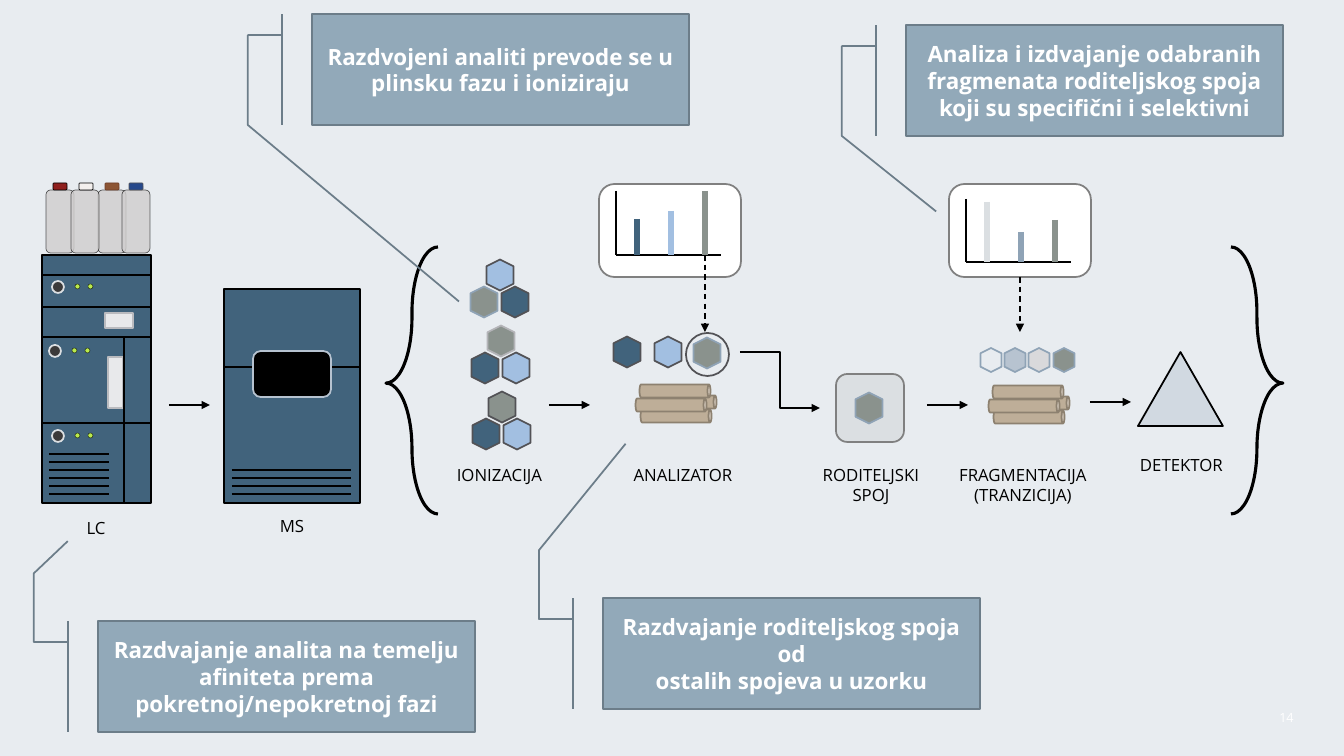
from lxml import etree
from pptx import Presentation
from pptx.dml.color import RGBColor
from pptx.enum.dml import MSO_LINE
from pptx.enum.shapes import MSO_CONNECTOR, MSO_SHAPE
from pptx.enum.text import MSO_ANCHOR, PP_ALIGN
from pptx.oxml.ns import qn
from pptx.util import Pt

RECT, ROUND, OVAL = MSO_SHAPE.RECTANGLE, MSO_SHAPE.ROUNDED_RECTANGLE, MSO_SHAPE.OVAL
HEXAGON, CAN, TRIANGLE = MSO_SHAPE.HEXAGON, MSO_SHAPE.CAN, MSO_SHAPE.ISOSCELES_TRIANGLE
LEFT_BRACE, RIGHT_BRACE = MSO_SHAPE.LEFT_BRACE, MSO_SHAPE.RIGHT_BRACE
CALLOUT = MSO_SHAPE.LINE_CALLOUT_3_BORDER_AND_ACCENT_BAR
STRAIGHT, ELBOW = MSO_CONNECTOR.STRAIGHT, MSO_CONNECTOR.ELBOW
DASH, CENTER, MIDDLE = MSO_LINE.DASH, PP_ALIGN.CENTER, MSO_ANCHOR.MIDDLE

rgb = RGBColor.from_string
BACKGROUND, BLACK, WHITE = rgb("E8ECF0"), rgb("000000"), rgb("FFFFFF")
STEEL, SKY, SAGE = rgb("41637C"), rgb("A2BFE1"), rgb("8A928D")
MIST, SLATE, CHARCOAL, ASH = rgb("DBDFE2"), rgb("8FA3B6"), rgb("525256"), rgb("808080")
PALE, HAZE, SILVER, SOFT = rgb("D1D9E1"), rgb("B7C3D0"), rgb("D9D9DB"), rgb("B4B4B8")
BOTTLE, KNOB, LED = rgb("D0CECE"), rgb("3B3A3A"), rgb("BAEA4E")
SLOT, SLOT_EDGE = rgb("E8E9EB"), rgb("BABBBF")
WOOD, BARK = rgb("BEAE98"), rgb("8D8170")
NOTE, NOTE_EDGE = rgb("92A9B9"), rgb("6C7D89")

FONT = "Open Sans"
PX = 914400 / 100.8

# Content: text, left, top, width, height, wrap
LABELS = [
    ("LC", 14, 513, 164, 30, True),
    ("MS", 210, 511, 164, 30, True),
    ("IONIZACIJA", 445, 460, 109, 30, True),
    ("ANALIZATOR", 619, 460, 128, 30, True),
    ("RODITELJSKI\nSPOJ", 807, 460, 128, 50, True),
    ("FRAGMENTACIJA\n(TRANZICIJA)", 946, 460, 154, 50, False),
    ("DETEKTOR", 1118, 450, 127, 30, True),
]
# text, left, top, last two points of the leader (y, x)
CALLOUTS = [
    ("Razdvajanje analita na temelju afiniteta prema pokretnoj/nepokretnoj fazi",
     98, 621, (-0.43, -0.17, -0.72, -0.08)),
    ("Razdvojeni analiti prevode se u plinsku fazu i ioniziraju",
     312, 14, (1, -0.17, 2.59, 0.39)),
    ("Razdvajanje roditeljskog spoja od\nostalih spojeva u uzorku",
     603, 598, (-0.43, -0.17, -1.39, 0.06)),
    ("Analiza i izdvajanje odabranih\nfragmenata roditeljskog spoja\nkoji su specifični i selektivni",
     906, 25, (1, -0.17, 1.68, 0.08)),
]
LC_MODULES = [(307, 30), (423, 80), (337, 86), (274, 33), (255, 20)]
BOTTLES = [46, 98, 71, 122]
CAPS = [(53, rgb("8F1F1D"), BLACK), (129, rgb("25488B"), CHARCOAL),
        (105, rgb("8C5534"), rgb("6D3D27")), (79, rgb("F4F0EE"), BLACK)]
CONTROLS = [(52, 281), (49, 345), (52, 430)]
SLOTS = [(105, 313, 28, 15), (108, 357, 15, 51)]
# top hexagon centre, then (fill, line) for right, top, left
CLUSTERS = [
    (500, 275, [(STEEL, CHARCOAL), (SKY, CHARCOAL), (SAGE, SLATE)]),
    (501, 341, [(SKY, CHARCOAL), (SAGE, SOFT), (STEEL, CHARCOAL)]),
    (502, 407, [(SKY, CHARCOAL), (SAGE, CHARCOAL), (STEEL, CHARCOAL)]),
]
IONS = [(707, 353, SAGE, SLATE), (627, 352, STEEL, CHARCOAL), (668, 352, SKY, CHARCOAL)]
FRAGMENTS = [(1064, SAGE), (1039, SILVER), (1015, HAZE), (991, None)]
ROD_BUNDLES = [(671, 405), (1024, 406)]
ROD_OFFSETS = [(10, -3), (4, -14), (5, 11), (0, 0)]
# card left, axis top, axis base, (bar offset, bar top, colour)
SPECTRA = [
    (599, 191, 255, [(38, 219, STEEL), (72, 211, SKY), (106, 191, SAGE)]),
    (949, 199, 262, [(38, 202, MIST), (72, 232, SLATE), (106, 220, SAGE)]),
]
FLOW_ARROWS = [(169, 405), (549, 405), (927, 405), (1090, 402)]


def px(*lengths):
    return [round(length * PX) for length in lengths]


def add_box(board, kind, left, top, width, height, fill, line, weight=1.25, adjust=()):
    box = board.add_shape(kind, *px(left, top, width, height))
    box.shadow.inherit = False
    if fill is None:
        box.fill.background()
    else:
        box.fill.solid()
        box.fill.fore_color.rgb = fill
    box.line.color.rgb = line
    box.line.width = Pt(weight)
    for index, value in enumerate(adjust):
        box.adjustments[index] = value
    return box


def add_upright(kind, x, y, width, height, fill, line, adjust=()):
    box = add_box(page.shapes, kind, x - width / 2, y - height / 2, width, height,
                  fill, line, adjust=adjust)
    box.rotation = 90


def add_hexagon(x, y, fill, line, width=31, height=27):
    add_upright(HEXAGON, x, y, width, height, fill, line)


def add_line(board, x1, y1, x2, y2, color=BLACK, weight=1.0, kind=STRAIGHT,
             arrow=False, dash=None):
    line = board.add_connector(kind, *px(x1, y1, x2, y2))
    line.line.color.rgb = color
    line.line.width = Pt(weight)
    if dash is not None:
        line.line.dash_style = dash
    properties = line._element.spPr
    if arrow:
        etree.SubElement(properties.find(qn("a:ln")), qn("a:tailEnd"), type="triangle")
    etree.SubElement(properties, qn("a:effectLst"))
    return line


def write(box, text, size, color, bold=False):
    box.text_frame.text = text
    for para in box.text_frame.paragraphs:
        para.alignment = CENTER
        for span in para.runs:
            span.font.name, span.font.size = FONT, Pt(size)
            span.font.color.rgb, span.font.bold = color, bold


def add_label(text, left, top, width, height, wrap=True, size=12, color=BLACK):
    box = page.shapes.add_textbox(*px(left, top, width, height))
    box.text_frame.word_wrap = wrap
    write(box, text, size, color)
    return box


deck = Presentation()
deck.slide_width, deck.slide_height = px(1344, 756)
page = deck.slides.add_slide(deck.slide_layouts[6])
page.background.fill.solid()
page.background.fill.fore_color.rgb = BACKGROUND

# Liquid chromatograph
lc = page.shapes.add_group_shape().shapes
for top, height in LC_MODULES:
    add_box(lc, RECT, 42, top, 109, height, STEEL, BLACK)
for left in BOTTLES:
    bottle = add_box(lc, ROUND, left, 190, 28, 63, BOTTLE, BLACK, 0.5)
    for color, alpha in zip(bottle._element.spPr.iter(qn("a:srgbClr")), ("82000", "60000")):
        etree.SubElement(color, qn("a:alpha"), val=alpha)
for left, fill, edge in CAPS:
    add_box(lc, ROUND, left, 183, 14, 7, fill, edge, 0.5)
for left, top in CONTROLS:
    add_box(lc, OVAL, left, top, 12, 12, KNOB, MIST)
    for offset in (23, 36):
        add_box(lc, OVAL, left + offset, top + 3, 5, 5, LED, BLACK, 0.25)
for slot in SLOTS:
    add_box(lc, RECT, *slot, SLOT, SLOT_EDGE)
add_line(lc, 124, 337, 124, 503)
for y in range(454, 495, 8):
    add_line(lc, 49, y, 109, y, weight=1.75)

# Mass spectrometer
ms = page.shapes.add_group_shape().shapes
add_box(ms, RECT, 224, 289, 136, 214, STEEL, BLACK)
add_line(ms, 360, 367, 224, 367)
add_box(ms, ROUND, 253, 351, 78, 46, BLACK, HAZE)
for y in range(470, 495, 8):
    add_line(ms, 232, y, 351, y, weight=1.75)

# Ions and rods
for x, y, (right, top, left) in CLUSTERS:
    add_hexagon(x + 15, y + 27, *right)
    add_hexagon(x, y, *top)
    add_hexagon(x - 16, y + 27, *left)
for x, y in ROD_BUNDLES:
    for dx, dy in ROD_OFFSETS:
        add_upright(CAN, x + dx, y + dy, 13, 71, WOOD, BARK, (0.23,))
for ion in IONS:
    add_hexagon(*ion)

# Spectra
cards = []
for left, top, base, bars in SPECTRA:
    cards.append(add_box(page.shapes, ROUND, left, 184, 142, 93, WHITE, ASH))
    add_line(page.shapes, left + 17, top, left + 17, base)
    add_line(page.shapes, left + 17, base, left + 122, base)
    for offset, bar_top, color in bars:
        add_line(page.shapes, left + offset, bar_top, left + offset, base, color, 4.5)
add_line(page.shapes, 705, 255, 705, 332, arrow=True, dash=DASH)
drop = add_line(page.shapes, 1020, 277, 1020, 332, arrow=True, dash=DASH)
drop.begin_connect(cards[1], 2)

# Parent ion, fragments and detector
add_box(page.shapes, OVAL, 686, 333, 43, 43, None, CHARCOAL)
add_line(page.shapes, 740, 352, 820, 408, weight=1.75, kind=ELBOW, arrow=True)
add_box(page.shapes, ROUND, 836, 374, 68, 68, MIST, ASH)
add_hexagon(869, 408, SAGE, SLATE)
for x, fill in FRAGMENTS:
    add_hexagon(x, 360, fill, SLATE, 24, 21)
add_box(page.shapes, TRIANGLE, 1138, 352, 85, 74, PALE, BLACK)

# Flow arrows, braces and labels
for x, y in FLOW_ARROWS:
    add_line(page.shapes, x, y, x + 41, y, weight=1.75, arrow=True)
for kind, left in ((LEFT_BRACE, 386), (RIGHT_BRACE, 1231)):
    add_box(page.shapes, kind, left, 247, 52, 267, None, BLACK, 2.25, (1.27, 0.51))
for label in LABELS:
    add_label(*label)

# Callouts
for text, left, top, leader in CALLOUTS:
    note = add_box(page.shapes, CALLOUT, left, top, 377, 111, NOTE, NOTE_EDGE,
                   adjust=(0.19, -0.08, 0.19, -0.17) + leader)
    note.text_frame.word_wrap = True
    note.text_frame.vertical_anchor = MIDDLE
    write(note, text, 16, WHITE, True)

# Page number
number = add_label("14", 1266, 703, 41, 30, size=9, color=WHITE)
number.text_frame.vertical_anchor = MIDDLE

deck.save("out.pptx")
